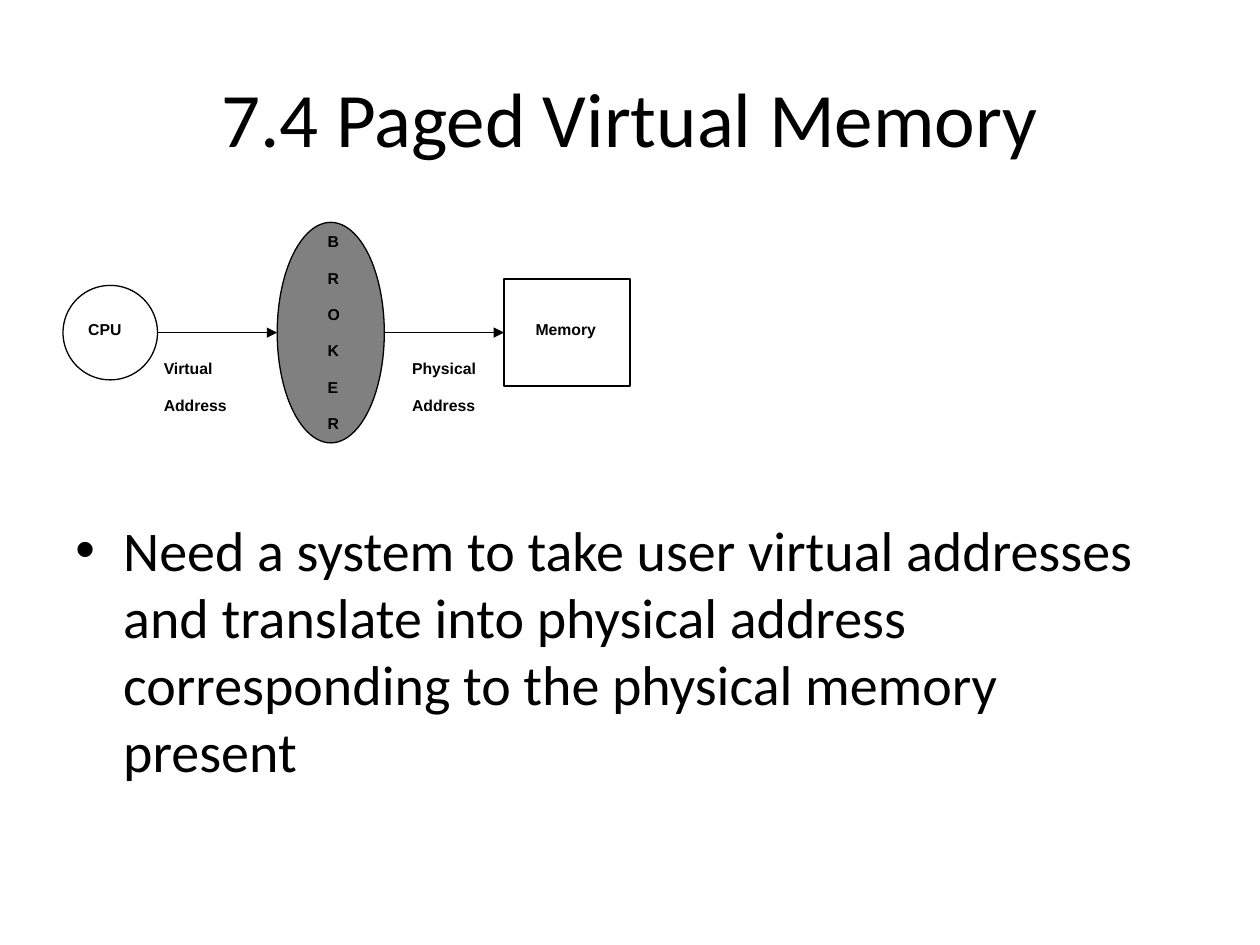
from lxml.etree import SubElement
from pptx import Presentation
from pptx.dml.color import RGBColor
from pptx.enum.shapes import MSO_CONNECTOR, MSO_SHAPE
from pptx.enum.text import MSO_ANCHOR, PP_ALIGN
from pptx.oxml.ns import qn
from pptx.util import Inches, Pt

BLACK = RGBColor(0, 0, 0)
GRAY = RGBColor(0x80, 0x80, 0x80)

deck = Presentation()
deck.slide_width, deck.slide_height = Inches(10), Inches(7.5)
slide = deck.slides.add_slide(deck.slide_layouts[6])
shapes = slide.shapes
COL = deck.slide_width / 200
ROW = deck.slide_height / 150
MID = 52.8


def place(x, y, wide, high):
    return int(x * COL), int(y * ROW), int(wide * COL), int(high * ROW)


def write(spot, lines, font, size, bold=False):
    frame = shapes.add_textbox(*place(*spot)).text_frame
    frame.word_wrap = True
    frame.text = "\n".join(lines)
    for para in frame.paragraphs:
        para.font.name = font
        para.font.size = Pt(size)
        para.font.bold = bold
        para.font.color.rgb = BLACK
    return frame


title = write((10, 6, 180, 25), ["7.4 Paged Virtual Memory"], "Calibri", 44)
title.vertical_anchor = MSO_ANCHOR.MIDDLE
title.paragraphs[0].alignment = PP_ALIGN.CENTER

body = write((10, 80.8, 180, 53.2), [
    "Need a system to take user virtual addresses and translate into "
    "physical address corresponding to the physical memory present"
], "Calibri", 32)
point = body.paragraphs[0]
point.space_before = Pt(6.4)
props = point._p.get_or_add_pPr()
props.set("marL", str(Inches(0.38)))
props.set("indent", str(-Inches(0.38)))
SubElement(props, qn("a:buFont")).set("typeface", "Arial")
SubElement(props, qn("a:buChar")).set("char", "•")
for late in props.findall(qn("a:defRPr")):
    props.append(late)

nodes = []
for kind, left, wide, high, fill in [
    (MSO_SHAPE.OVAL, 10, 15, 15, None),
    (MSO_SHAPE.OVAL, 44, 17, 35, GRAY),
    (MSO_SHAPE.RECTANGLE, 80, 20, 17, None),
]:
    node = shapes.add_shape(kind, *place(left, MID - high / 2, wide, high))
    node.shadow.inherit = False
    if fill is None:
        node.fill.background()
    else:
        node.fill.solid()
        node.fill.fore_color.rgb = fill
    node.line.color.rgb = BLACK
    node.line.width = Pt(0.75)
    nodes.append(node)

for start, end in zip(nodes, nodes[1:]):
    level = int(MID * ROW)
    arrow = shapes.add_connector(
        MSO_CONNECTOR.STRAIGHT, start.left + start.width, level, end.left, level)
    arrow.line.color.rgb = BLACK
    arrow.line.width = Pt(0.75)
    SubElement(arrow.line._get_or_add_ln(), qn("a:tailEnd")).set("type", "triangle")
    SubElement(arrow._element.spPr, qn("a:effectLst"))
arrow.end_connect(nodes[-1], 1)

for spot, lines in [
    ((13, 50.2, 10, 4), ["CPU"]),
    ((51, 36.2, 4, 19), list("BROKER")),
    ((84, 50.2, 13.6, 4), ["Memory"]),
    ((25, 56.4, 13.4, 7), ["Virtual", "Address"]),
    ((64.4, 56.4, 14.2, 7), ["Physical", "Address"]),
]:
    label = write(spot, lines, "Arial", 9, True)
    label.margin_left = label.margin_right = Inches(0.05)
    label.margin_top = label.margin_bottom = Inches(0.03)
    for para in label.paragraphs:
        para.space_after = Pt(10)

deck.save("out.pptx")
